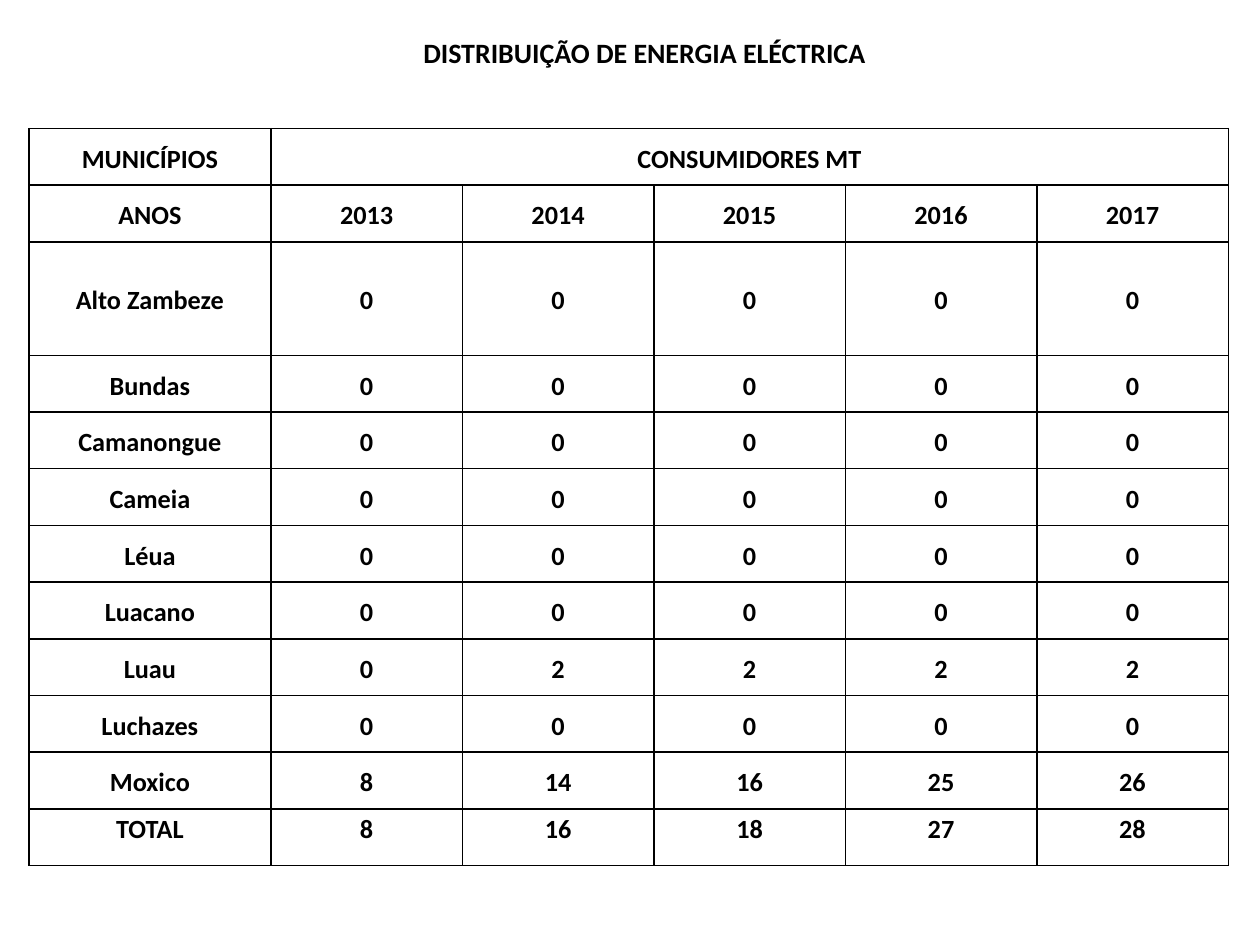
from lxml import etree
from pptx import Presentation
from pptx.dml.color import RGBColor
from pptx.enum.text import MSO_ANCHOR, PP_ALIGN
from pptx.oxml.ns import qn
from pptx.util import Inches, Pt

BLACK = RGBColor(0, 0, 0)
FONT = "Calibri"
CENTER = PP_ALIGN.CENTER
TOP, MIDDLE = MSO_ANCHOR.TOP, MSO_ANCHOR.MIDDLE

TITLE = "DISTRIBUIÇÃO DE ENERGIA ELÉCTRICA"
ROWS = [
    ("MUNICÍPIOS", "CONSUMIDORES MT"),
    ("ANOS", 2013, 2014, 2015, 2016, 2017),
    ("Alto Zambeze", 0, 0, 0, 0, 0),
    ("Bundas", 0, 0, 0, 0, 0),
    ("Camanongue", 0, 0, 0, 0, 0),
    ("Cameia", 0, 0, 0, 0, 0),
    ("Léua", 0, 0, 0, 0, 0),
    ("Luacano", 0, 0, 0, 0, 0),
    ("Luau", 0, 2, 2, 2, 2),
    ("Luchazes", 0, 0, 0, 0, 0),
    ("Moxico", 8, 14, 16, 25, 26),
    ("TOTAL", 8, 16, 18, 27, 28),
]
COLUMN_WIDTHS = [1.92] + [1.52] * 5
ROW_HEIGHT = 0.45
TALL_ROW = 2  # Alto Zambeze takes double height


def write_text(frame, text, size):
    para = frame.paragraphs[0]
    para.alignment = CENTER
    span = para.add_run()
    span.text = text
    span.font.name = FONT
    span.font.size = Pt(size)
    span.font.bold = True
    span.font.color.rgb = BLACK
    return para


def add_title(page):
    box = page.shapes.add_textbox(Inches(2.81), Inches(0.23), Inches(4.61), Inches(0.67))
    frame = box.text_frame
    frame.word_wrap = True
    frame.vertical_anchor = TOP
    write_text(frame, TITLE, 16)


def add_borders(cell):
    properties = cell._tc.get_or_add_tcPr()
    for side in ("a:lnL", "a:lnR", "a:lnT", "a:lnB"):
        line = etree.SubElement(properties, qn(side), w=str(Pt(1)))
        fill = etree.SubElement(line, qn("a:solidFill"))
        etree.SubElement(fill, qn("a:srgbClr"), val=str(BLACK))


def style_cell(cell, anchor):
    cell.margin_left = cell.margin_right = Inches(0.07)
    cell.margin_top = cell.margin_bottom = 0
    cell.vertical_anchor = anchor
    add_borders(cell)
    cell.fill.background()


def add_consumer_table(page):
    heights = [ROW_HEIGHT * (2 if row == TALL_ROW else 1) for row in range(len(ROWS))]
    table = page.shapes.add_table(
        len(ROWS), len(COLUMN_WIDTHS), Inches(0.23), Inches(1.02),
        Inches(sum(COLUMN_WIDTHS)), Inches(sum(heights))).table
    table.first_row = table.horz_banding = False
    for column, width in zip(table.columns, COLUMN_WIDTHS):
        column.width = Inches(width)
    for row, height in zip(table.rows, heights):
        row.height = Inches(height)

    # The heading covers all the year columns
    table.cell(0, 1).merge(table.cell(0, len(COLUMN_WIDTHS) - 1))

    for row, values in enumerate(ROWS):
        anchor = TOP if values[0] == "TOTAL" else MIDDLE
        for column in range(len(COLUMN_WIDTHS)):
            style_cell(table.cell(row, column), anchor)
        for column, value in enumerate(values):
            para = write_text(table.cell(row, column).text_frame, str(value), 15)
            para.line_spacing = 1.15


def main():
    deck = Presentation()
    deck.slide_width, deck.slide_height = Inches(10), Inches(7.5)
    page = deck.slides.add_slide(deck.slide_layouts[6])
    add_consumer_table(page)
    add_title(page)
    deck.save("out.pptx")


if __name__ == "__main__":
    main()
